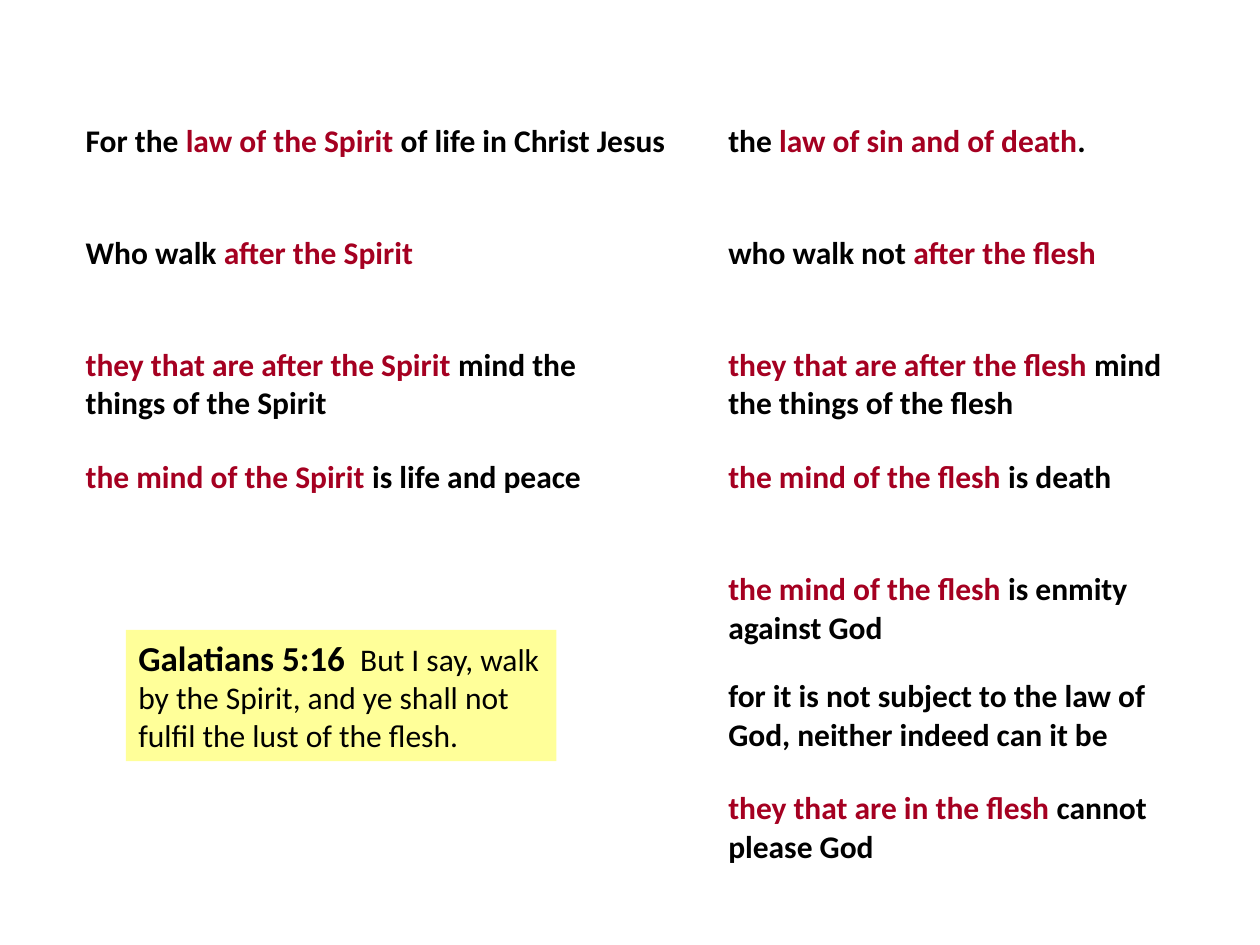
from typing import NamedTuple

from lxml.etree import SubElement
from pptx import Presentation
from pptx.dml.color import RGBColor
from pptx.enum.shapes import MSO_SHAPE as Shape
from pptx.enum.text import MSO_ANCHOR as Anchor, MSO_AUTO_SIZE as AutoSize, PP_ALIGN as Align
from pptx.oxml.ns import qn
from pptx.util import Pt

BLACK = RGBColor(0x00, 0x00, 0x00)
RED = RGBColor(0xA5, 0x00, 0x21)
WHITE = RGBColor(0xFF, 0xFF, 0xFF)
YELLOW = RGBColor(0xFF, 0xFF, 0x00)
FONT = "Calibri"


class Span(NamedTuple):
    text: str
    color: RGBColor = BLACK


class Row(NamedTuple):
    spirit: list[list[Span]]
    flesh: list[list[Span]]
    height: float = 64.08


ROWS = [
    Row([[Span("For the "), Span("law of the Spirit ", RED), Span("of life in Christ Jesus")]],
        [[Span("the "), Span("law of sin and of death", RED), Span(".")]]),
    Row([[Span("Who walk "), Span("after the Spirit", RED)]],
        [[Span("who walk not "), Span("after the flesh", RED)]]),
    Row([[Span("they that are after the Spirit ", RED), Span("mind the")],
         [Span("things of the Spirit")]],
        [[Span("they that are after the flesh ", RED), Span("mind the things of the flesh")]]),
    Row([[Span("the mind of the Spirit ", RED), Span("is life and peace")]],
        [[Span("the mind of the flesh ", RED), Span("is death")]]),
    Row([], [[Span("the mind of the flesh ", RED), Span("is enmity against God")]], 61.2),
    Row([], [[Span("for it is not subject to the law of God, neither indeed can it be")]]),
    Row([], [[Span("they that are in the flesh ", RED), Span("cannot please God")]]),
]
COL_WIDTHS = (367.2, 274.32)


def add_run(p, text: str, *, size: float = 18, bold: bool = True, color: RGBColor = BLACK) -> None:
    r = p.add_run()
    r.text = text
    r.font.name = FONT
    r.font.size = Pt(size)
    r.font.bold = bold
    r.font.color.rgb = color


def set_borders(cell, *, bottom: float = 1) -> None:
    tc_pr = cell._tc.get_or_add_tcPr()
    for side, width in (("L", 1), ("R", 1), ("T", 1), ("B", bottom)):
        ln = SubElement(tc_pr, qn(f"a:ln{side}"), w=str(Pt(width)))
        fill = SubElement(ln, qn("a:solidFill"))
        SubElement(fill, qn("a:srgbClr"), val=str(WHITE))


def fill_cell(cell, paragraphs: list[list[Span]], *, bottom: float) -> None:
    set_borders(cell, bottom=bottom)
    cell.fill.background()
    tf = cell.text_frame
    for i, spans in enumerate(paragraphs):
        p = tf.add_paragraph() if i else tf.paragraphs[0]
        for span in spans:
            add_run(p, span.text, color=span.color)


def add_comparison(s) -> None:
    height = sum(row.height for row in ROWS)
    frame = s.shapes.add_table(len(ROWS), len(COL_WIDTHS), Pt(41.75), Pt(66.25),
                               Pt(sum(COL_WIDTHS)), Pt(height))
    table = frame.table
    table.first_row = False
    table.horz_banding = False
    for column, width in zip(table.columns, COL_WIDTHS):
        column.width = Pt(width)
    for i, row in enumerate(ROWS):
        table.rows[i].height = Pt(row.height)
        for j, paragraphs in enumerate((row.spirit, row.flesh)):
            fill_cell(table.cell(i, j), paragraphs, bottom=1 if i else 3)


def add_verse(s) -> None:
    sp = s.shapes.add_shape(Shape.RECTANGLE, Pt(72), Pt(360), Pt(246), Pt(75))
    sp.shadow.inherit = False
    sp.line.fill.background()
    sp.fill.solid()
    sp.fill.fore_color.rgb = YELLOW
    color = sp._element.spPr.find(qn("a:solidFill")).find(qn("a:srgbClr"))
    SubElement(color, qn("a:alpha"), val="40000")
    tf = sp.text_frame
    tf.word_wrap = True
    tf.auto_size = AutoSize.SHAPE_TO_FIT_TEXT
    tf.vertical_anchor = Anchor.TOP
    p = tf.paragraphs[0]
    p.alignment = Align.LEFT
    add_run(p, "Galatians 5:16 ", size=20)
    add_run(p, " But I say, walk by the Spirit, and ye shall not fulfil the lust of the flesh.",
            bold=False)


def main() -> None:
    prs = Presentation()
    prs.slide_width, prs.slide_height = Pt(720), Pt(540)
    s = prs.slides.add_slide(prs.slide_layouts[6])
    add_comparison(s)
    add_verse(s)
    prs.save("out.pptx")


if __name__ == "__main__":
    main()
